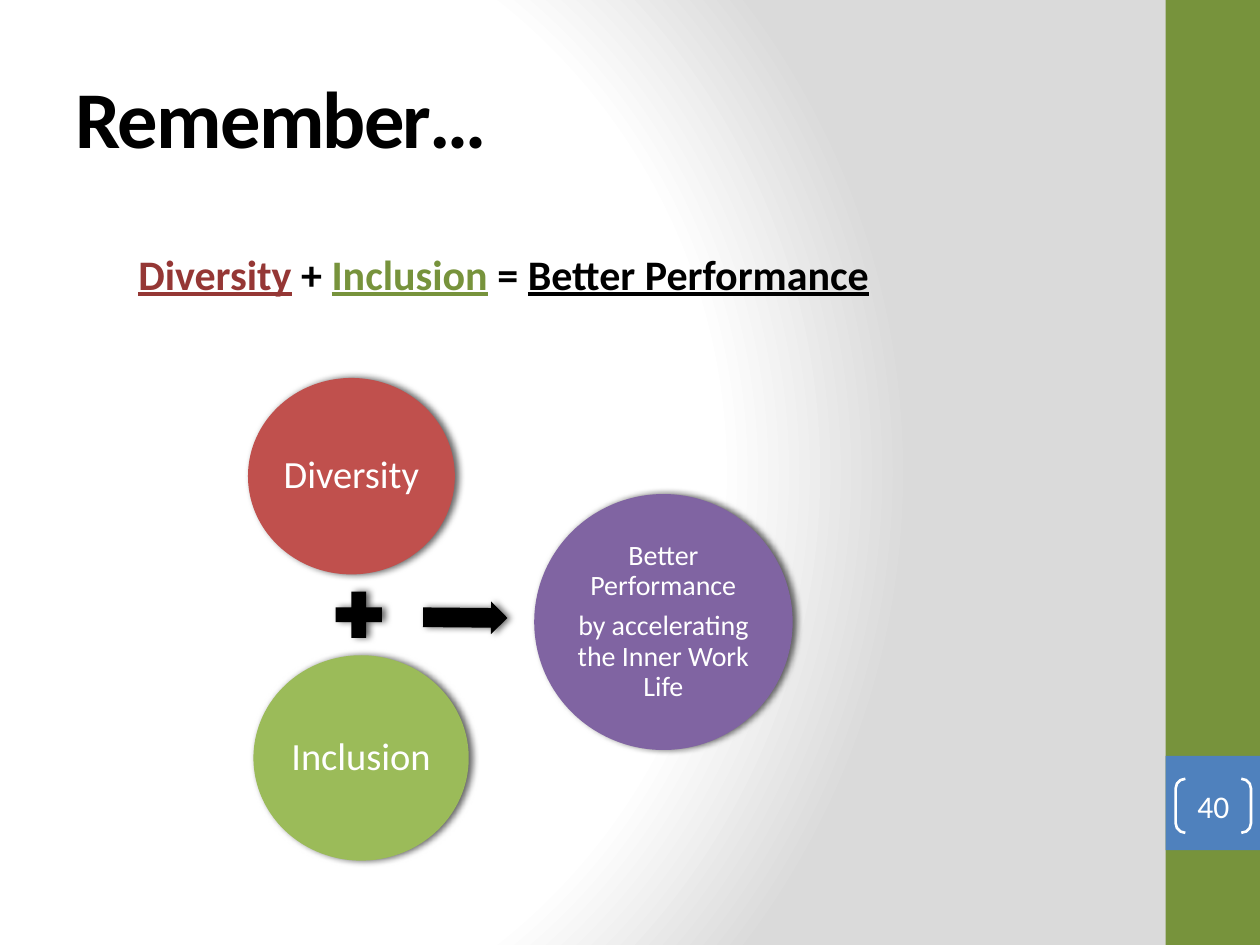
from lxml import etree
from pptx import Presentation
from pptx.dml.color import RGBColor
from pptx.enum.shapes import MSO_SHAPE
from pptx.enum.text import MSO_ANCHOR, MSO_AUTO_SIZE, PP_ALIGN
from pptx.oxml import parse_xml
from pptx.oxml.ns import nsdecls, qn
from pptx.util import Cm, Pt

RECT, OVAL = MSO_SHAPE.RECTANGLE, MSO_SHAPE.OVAL
PLUS, ARROW = MSO_SHAPE.MATH_PLUS, MSO_SHAPE.RIGHT_ARROW
BRACKETS = MSO_SHAPE.DOUBLE_BRACKET
LEFT, CENTER = PP_ALIGN.LEFT, PP_ALIGN.CENTER
MIDDLE = MSO_ANCHOR.MIDDLE

BLACK = RGBColor(0x00, 0x00, 0x00)
WHITE = RGBColor(0xFF, 0xFF, 0xFF)
DARK_GREEN = RGBColor(0x77, 0x93, 0x3C)
BLUE = RGBColor(0x4F, 0x81, 0xBD)
DARK_RED = RGBColor(0x95, 0x37, 0x35)
RED = RGBColor(0xC0, 0x50, 0x4D)
GREEN = RGBColor(0x9B, 0xBB, 0x59)
PURPLE = RGBColor(0x80, 0x64, 0xA2)

BACKGROUND = f"""<p:bg {nsdecls('p', 'a')}><p:bgPr><a:gradFill rotWithShape="1"><a:gsLst>
<a:gs pos="0"><a:srgbClr val="FFFFFF"/></a:gs>
<a:gs pos="75000"><a:srgbClr val="FFFFFF"/></a:gs>
<a:gs pos="100000"><a:srgbClr val="DADADA"/></a:gs></a:gsLst>
<a:path path="circle"><a:fillToRect l="20000" t="50000" r="100000" b="50000"/></a:path>
</a:gradFill><a:effectLst/></p:bgPr></p:bg>"""

SHADOW = f"""<a:effectLst {nsdecls('a')}><a:outerShdw blurRad="50800" dist="25400" dir="0"
rotWithShape="0"><a:srgbClr val="000000"><a:alpha val="60000"/></a:srgbClr></a:outerShdw>
</a:effectLst>"""


def style(font, size, color, bold=False, underline=False):
    font.name, font.size = "Calibri", Pt(size)
    font.color.rgb = color
    font.bold, font.underline = bold, underline


def set_insets(tf, inset):
    tf.margin_left = tf.margin_right = tf.margin_top = tf.margin_bottom = inset


def add_shape(slide, kind, box, fill):
    s = slide.shapes.add_shape(kind, *map(Cm, box))
    s.shadow.inherit = False
    s.fill.solid()
    s.fill.fore_color.rgb = fill
    s.line.fill.background()
    return s


def add_raised_shape(slide, kind, box, fill):
    """Add a shape that casts a soft shadow to the right."""
    s = add_shape(slide, kind, box, fill)
    flat = s._element.spPr.find(qn("a:effectLst"))
    flat.getparent().replace(flat, parse_xml(SHADOW))
    return s


def add_circle(slide, box, fill, lines, size, inset):
    tf = add_raised_shape(slide, OVAL, box, fill).text_frame
    set_insets(tf, Cm(inset))
    tf.word_wrap, tf.vertical_anchor = True, MIDDLE
    tf.text = "\n".join(lines)
    for p in tf.paragraphs:
        p.alignment = CENTER
        after = etree.SubElement(p._p.get_or_add_pPr(), qn("a:spcAft"))
        etree.SubElement(after, qn("a:spcPct")).set("val", "35000")
        p.line_spacing = 0.9
        style(p.runs[0].font, size, WHITE)


def add_title(slide, text):
    s = slide.shapes.title
    s.left, s.top, s.width, s.height = Cm(1.27), Cm(0.76), Cm(21.16), Cm(3.18)
    tf = s.text_frame
    tf.text, tf.vertical_anchor = text, MIDDLE
    p = tf.paragraphs[0]
    p.alignment = LEFT
    r = p.runs[0]
    style(r.font, 46, BLACK, bold=True)
    r._r.get_or_add_rPr().set("spc", "-100")


def add_page_number(slide, number):
    s = slide.shapes.add_shape(BRACKETS, Cm(23.7), Cm(15.7), Cm(1.52), Cm(1.09))
    s.shadow.inherit = False
    s.adjustments[0] = 0.18
    s.fill.background()
    s.line.color.rgb, s.line.width = WHITE, Pt(1.5)
    tf = s.text_frame
    set_insets(tf, 0)
    tf.text, tf.vertical_anchor = number, MIDDLE
    p = tf.paragraphs[0]
    p.alignment = CENTER
    style(p.runs[0].font, 18, WHITE)


def add_equation(slide, terms):
    """Write (text, colour, underlined) terms on one line."""
    tf = slide.shapes.add_textbox(Cm(2.54), Cm(4.88), Cm(15.42), Cm(2.06)).text_frame
    tf.word_wrap, tf.auto_size = False, MSO_AUTO_SIZE.SHAPE_TO_FIT_TEXT
    p = tf.paragraphs[0]
    p.alignment = LEFT
    for text, color, underlined in terms:
        r = p.add_run()
        r.text = text
        style(r.font, 24, color, bold=True, underline=underlined)


def main():
    prs = Presentation()
    prs.slide_width, prs.slide_height = Cm(25.4), Cm(19.05)
    slide = prs.slides.add_slide(prs.slide_layouts[5])
    slide._element.cSld.insert(0, parse_xml(BACKGROUND))

    add_shape(slide, RECT, (23.5, 0, 1.9, 19.05), DARK_GREEN)
    add_shape(slide, RECT, (23.5, 15.24, 1.9, 1.9), BLUE)
    add_title(slide, "Remember…")
    add_page_number(slide, "40")
    add_equation(slide, [
        ("Diversity", DARK_RED, True),
        (" + ", BLACK, False),
        ("Inclusion", DARK_GREEN, True),
        (" = ", BLACK, False),
        ("Better Performance", BLACK, True),
    ])

    add_circle(slide, (5, 7.62, 4.17, 3.96), RED, ["Diversity"], 22, 0.08)
    add_raised_shape(slide, PLUS, (6.6, 11.76, 1.27, 1.27), BLACK)
    add_circle(slide, (5.11, 13.21, 4.34, 4.14), GREEN, ["Inclusion"], 22, 0.08)
    arrow = add_raised_shape(slide, ARROW, (8.53, 12.12, 1.7, 0.66), BLACK)
    arrow.adjustments[0] = 0.6
    arrow.rotation = 0.5
    add_circle(slide, (10.77, 9.96, 5.21, 5.16), PURPLE,
               ["Better Performance", "by accelerating the Inner Work Life"], 16, 0.05)

    prs.save("out.pptx")


if __name__ == "__main__":
    main()
